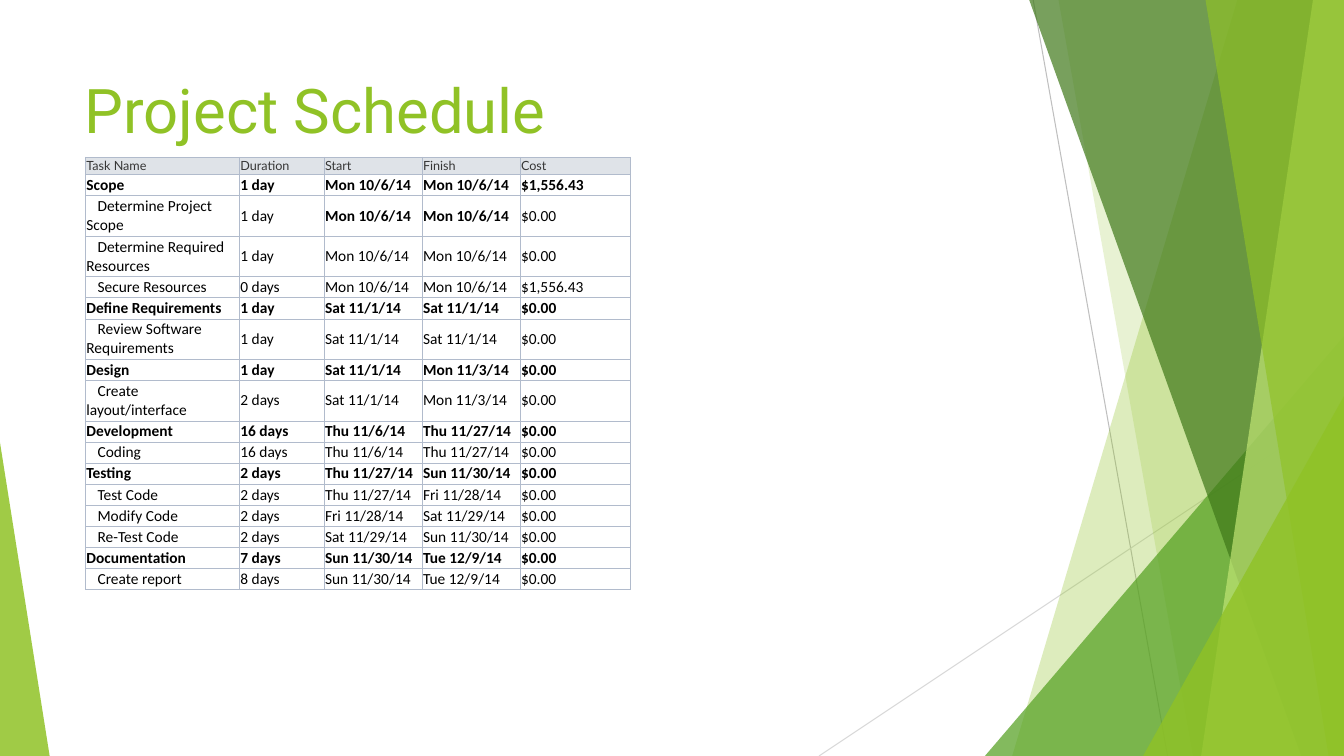
from pptx import Presentation
from pptx.dml.color import RGBColor
from pptx.enum.shapes import MSO_CONNECTOR, MSO_SHAPE
from pptx.enum.text import MSO_ANCHOR
from pptx.oxml import parse_xml
from pptx.oxml.ns import nsdecls, qn
from pptx.oxml.xmlchemy import OxmlElement
from pptx.util import Pt

STRAIGHT = MSO_CONNECTOR.STRAIGHT
TRIANGLE = MSO_SHAPE.ISOSCELES_TRIANGLE
MIDDLE = MSO_ANCHOR.MIDDLE

WIDTH, HEIGHT = 960, 540
TOP = -0.6
COLORS = {
    "lime": "90C226", "green": "54A021", "forest": "3F7819", "pale": "C0E474",
    "gray": "BFBFBF", "light gray": "D9D9D9", "border": "B1BBCC",
    "header": "DFE3E8", "header text": "363636", "white": "FFFFFF", "black": "000000",
}

HEADER = ("Task Name", "Duration", "Start", "Finish", "Cost")
COLUMN_WIDTHS = (110, 60.5, 70, 70, 79)
HEADER_HEIGHT, ROW_HEIGHT, TALL_HEIGHT = 12.5, 15.1, 28.9
PHASES = {"Scope", "Define Requirements", "Design", "Development", "Testing", "Documentation"}
TALL_TASKS = {"Determine Project Scope", "Determine Required Resources",
              "Review Software Requirements", "Create layout/interface"}
BOLD_DATES = {"Determine Project Scope"}
SCHEDULE = [
    ("Scope", "1 day", "Mon 10/6/14", "Mon 10/6/14", "$1,556.43"),
    ("Determine Project Scope", "1 day", "Mon 10/6/14", "Mon 10/6/14", "$0.00"),
    ("Determine Required Resources", "1 day", "Mon 10/6/14", "Mon 10/6/14", "$0.00"),
    ("Secure Resources", "0 days", "Mon 10/6/14", "Mon 10/6/14", "$1,556.43"),
    ("Define Requirements", "1 day", "Sat 11/1/14", "Sat 11/1/14", "$0.00"),
    ("Review Software Requirements", "1 day", "Sat 11/1/14", "Sat 11/1/14", "$0.00"),
    ("Design", "1 day", "Sat 11/1/14", "Mon 11/3/14", "$0.00"),
    ("Create layout/interface", "2 days", "Sat 11/1/14", "Mon 11/3/14", "$0.00"),
    ("Development", "16 days", "Thu 11/6/14", "Thu 11/27/14", "$0.00"),
    ("Coding", "16 days", "Thu 11/6/14", "Thu 11/27/14", "$0.00"),
    ("Testing", "2 days", "Thu 11/27/14", "Sun 11/30/14", "$0.00"),
    ("Test Code", "2 days", "Thu 11/27/14", "Fri 11/28/14", "$0.00"),
    ("Modify Code", "2 days", "Fri 11/28/14", "Sat 11/29/14", "$0.00"),
    ("Re-Test Code", "2 days", "Sat 11/29/14", "Sun 11/30/14", "$0.00"),
    ("Documentation", "7 days", "Sun 11/30/14", "Tue 12/9/14", "$0.00"),
    ("Create report", "8 days", "Sun 11/30/14", "Tue 12/9/14", "$0.00"),
]


class SlideBuilder:
    def __init__(self, slide):
        self.slide = slide
        self.shapes = slide.shapes

    def color(self, name):
        return RGBColor.from_string(COLORS[name])

    def line(self, start, end, color):
        connector = self.shapes.add_connector(STRAIGHT, *map(Pt, start + end))
        connector.line.color.rgb = self.color(color)
        connector.line.width = Pt(0.75)
        connector._element.spPr.append(OxmlElement("a:effectLst"))

    def paint(self, shape, color, opacity):
        shape.shadow.inherit = False
        shape.line.fill.background()
        shape.fill.solid()
        shape.fill.fore_color.rgb = self.color(color)
        alpha = OxmlElement("a:alpha")
        alpha.set("val", str(opacity * 1000))
        shape._element.spPr.find(qn("a:solidFill"))[0].append(alpha)

    def band(self, top_left, bottom_left, color, opacity):
        """Draw a facet that reaches the right edge of the slide."""
        corners = [(WIDTH, TOP), (WIDTH, HEIGHT), (bottom_left, HEIGHT)]
        builder = self.shapes.build_freeform(Pt(top_left), Pt(TOP), scale=1.0)
        builder.add_line_segments([(Pt(x), Pt(y)) for x, y in corners], close=True)
        self.paint(builder.convert_to_shape(), color, opacity)

    def triangle(self, left, top, width, apex, color, opacity):
        """Draw a triangle that stands on the bottom edge of the slide."""
        shape = self.shapes.add_shape(TRIANGLE, Pt(left), Pt(top), Pt(width), Pt(HEIGHT - top))
        shape.adjustments[0] = apex
        self.paint(shape, color, opacity)

    def text(self, paragraph, text, font_name, size, color, bold=False):
        paragraph.text = text
        font = paragraph.font
        font.name, font.size, font.bold = font_name, Pt(size), bold
        font.color.rgb = self.color(color)

    def title(self, text, left, top, width, height):
        frame = self.shapes.add_textbox(Pt(left), Pt(top), Pt(width), Pt(height)).text_frame
        frame.word_wrap = True
        self.text(frame.paragraphs[0], text, "Roboto", 44, "lime")

    def cell(self, cell, text, fill, style, indent=0):
        cell.margin_left = cell.margin_right = cell.margin_top = cell.margin_bottom = Pt(0.72)
        cell.vertical_anchor = MIDDLE
        paragraph = cell.text_frame.paragraphs[0]
        self.text(paragraph, text, *style)
        if indent:
            properties = paragraph._p.get_or_add_pPr()
            properties.set("marL", "0")
            properties.set("indent", str(Pt(indent)))
        cell_properties = cell._tc.get_or_add_tcPr()
        for side in ("lnL", "lnR", "lnT", "lnB"):
            cell_properties.append(parse_xml(
                f'<a:{side} {nsdecls("a")} w="{Pt(0.5)}"><a:solidFill>'
                f'<a:srgbClr val="{COLORS["border"]}"/></a:solidFill></a:{side}>'))
        cell.fill.solid()
        cell.fill.fore_color.rgb = self.color(fill)

    def schedule(self, left, top):
        heights = [HEADER_HEIGHT] + [
            TALL_HEIGHT if row[0] in TALL_TASKS else ROW_HEIGHT for row in SCHEDULE]
        table = self.shapes.add_table(
            len(heights), len(HEADER), Pt(left), Pt(top),
            Pt(sum(COLUMN_WIDTHS)), Pt(sum(heights))).table
        table.first_row = table.horz_banding = False
        for column, width in zip(table.columns, COLUMN_WIDTHS):
            column.width = Pt(width)
        for row, height in zip(table.rows, heights):
            row.height = Pt(height)
        for column, text in enumerate(HEADER):
            self.cell(table.cell(0, column), text, "header", ("Lato", 9, "header text"))
        for row, values in enumerate(SCHEDULE, start=1):
            task = values[0]
            for column, text in enumerate(values):
                bold = task in PHASES or (task in BOLD_DATES and column in (2, 3))
                indent = 8 if column == 0 and task not in PHASES else 0
                self.cell(table.cell(row, column), text, "white",
                          ("Calibri", 11, "black", bold), indent)


def main():
    presentation = Presentation()
    presentation.slide_width, presentation.slide_height = Pt(WIDTH), Pt(HEIGHT)
    builder = SlideBuilder(presentation.slides.add_slide(presentation.slide_layouts[6]))

    # Faceted decoration, back to front
    builder.line((738, 0), (834, HEIGHT), "gray")
    builder.line((WIDTH, 290), (585, HEIGHT), "light gray")
    builder.band(884, 723, "lime", 30)
    builder.band(756, 852, "lime", 20)
    builder.triangle(703.5, 240, 256.5, 1, "green", 72)
    builder.band(735, 929.5, "forest", 70)
    builder.band(938, 858, "pale", 70)
    builder.band(861, 949, "lime", 65)
    builder.triangle(816.5, 283, 143.5, 1, "lime", 80)
    builder.triangle(0, 316, 35.5, 0, "lime", 85)

    # Title and schedule
    builder.title("Project Schedule", 53.3, 48, 677, 104)
    builder.schedule(61, 112.3)

    presentation.save("out.pptx")


if __name__ == "__main__":
    main()
